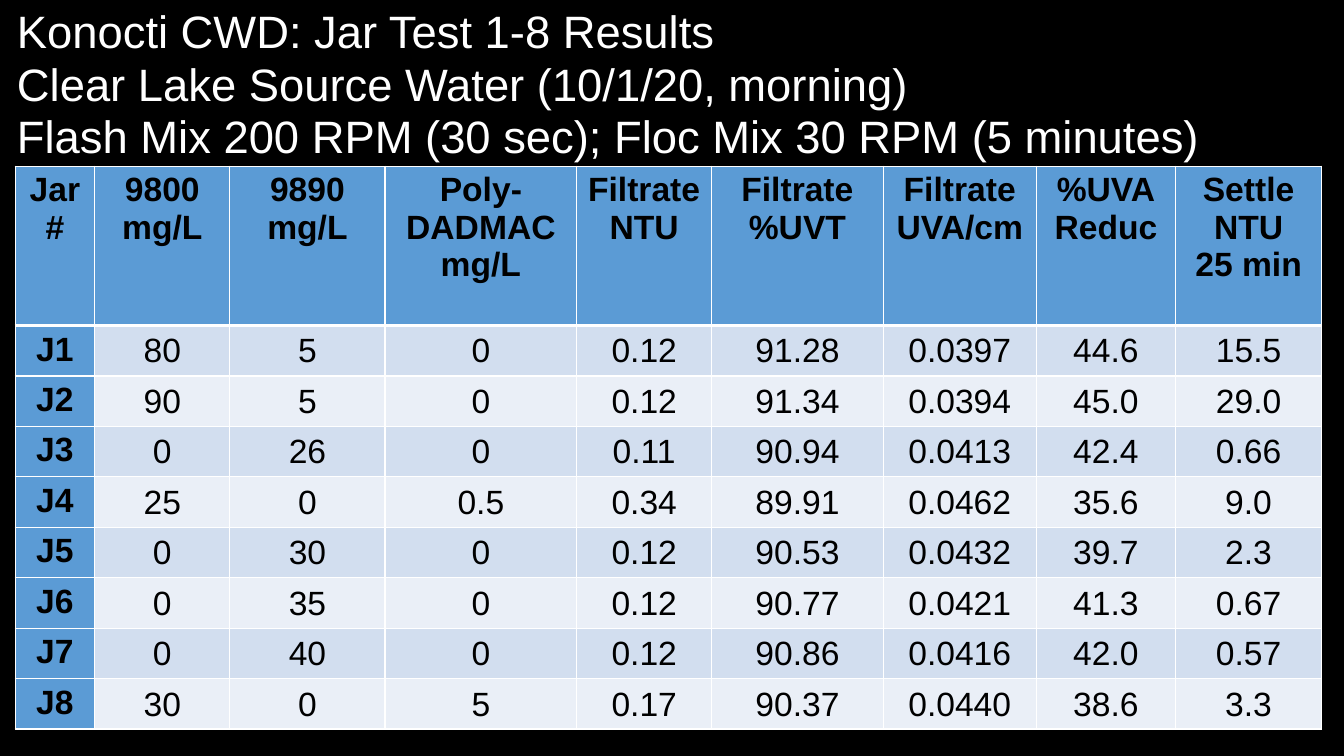
"""Build the jar test results slide: a title above a table of eight jars."""
from lxml import etree
from pptx import Presentation
from pptx.dml.color import RGBColor
from pptx.enum.text import MSO_ANCHOR, PP_ALIGN
from pptx.oxml.ns import qn
from pptx.util import Inches, Pt

BLACK = RGBColor(0x00, 0x00, 0x00)
WHITE = RGBColor(0xFF, 0xFF, 0xFF)
HEADER_BLUE = RGBColor(0x5B, 0x9B, 0xD5)
BANDS = [RGBColor(0xEA, 0xEF, 0xF7), RGBColor(0xD2, 0xDE, 0xEF)]
LEFT, CENTER = PP_ALIGN.LEFT, PP_ALIGN.CENTER
TOP, MIDDLE = MSO_ANCHOR.TOP, MSO_ANCHOR.MIDDLE

TITLE = (
    "Konocti CWD: Jar Test 1-8 Results\v"
    "Clear Lake Source Water (10/1/20, morning)\v"
    "Flash Mix 200 RPM (30 sec); Floc Mix 30 RPM (5 minutes)"
)
COLUMN_WIDTHS = [0.79, 1.34, 1.54, 1.9, 1.34, 1.7, 1.52, 1.38, 1.45]
HEADER_HEIGHT, JAR_HEIGHT = 1.58, 0.47
ROWS = [
    ["Jar\n#", "9800\nmg/L", "9890\nmg/L", "Poly-DADMAC\nmg/L", "Filtrate\nNTU",
     "Filtrate\n%UVT", "Filtrate\nUVA/cm", "%UVA\nReduc", "Settle\nNTU\n25 min"],
    ["J1", "80", "5", "0", "0.12", "91.28", "0.0397", "44.6", "15.5"],
    ["J2", "90", "5", "0", "0.12", "91.34", "0.0394", "45.0", "29.0"],
    ["J3", "0", "26", "0", "0.11", "90.94", "0.0413", "42.4", "0.66"],
    ["J4", "25", "0", "0.5", "0.34", "89.91", "0.0462", "35.6", "9.0"],
    ["J5", "0", "30", "0", "0.12", "90.53", "0.0432", "39.7", "2.3"],
    ["J6", "0", "35", "0", "0.12", "90.77", "0.0421", "41.3", "0.67"],
    ["J7", "0", "40", "0", "0.12", "90.86", "0.0416", "42.0", "0.57"],
    ["J8", "30", "0", "5", "0.17", "90.37", "0.0440", "38.6", "3.3"],
]


def write_text(text_frame, text, size=24, color=BLACK, bold=False, align=CENTER, spacing=1.0):
    text_frame.text = text
    for paragraph in text_frame.paragraphs:
        paragraph.alignment = align
        paragraph.line_spacing = spacing
        for run in paragraph.runs:
            run.font.name = "Arial"
            run.font.size = Pt(size)
            run.font.bold = bold
            run.font.color.rgb = color


def add_border(cell, side, width):
    properties = cell._tc.get_or_add_tcPr()
    line = etree.SubElement(properties, qn(f"a:ln{side}"), w=str(Pt(width)))
    fill = etree.SubElement(line, qn("a:solidFill"))
    etree.SubElement(fill, qn("a:srgbClr"), val=str(WHITE))


presentation = Presentation()
presentation.slide_width = Inches(13.33)
presentation.slide_height = Inches(7.5)
slide = presentation.slides.add_slide(presentation.slide_layouts[6])
slide.background.fill.solid()
slide.background.fill.fore_color.rgb = BLACK

title = slide.shapes.add_textbox(Inches(0.07), Inches(0.12), Inches(13.03), Inches(1.45))
title.text_frame.word_wrap = True
title.text_frame.vertical_anchor = MIDDLE
write_text(title.text_frame, TITLE, size=32.4, color=WHITE, align=LEFT, spacing=0.97)

table_height = HEADER_HEIGHT + JAR_HEIGHT * (len(ROWS) - 1)
table = slide.shapes.add_table(
    len(ROWS), len(COLUMN_WIDTHS),
    Inches(0.15), Inches(1.65), Inches(sum(COLUMN_WIDTHS)), Inches(table_height),
).table
table.first_col = True
for column, width in zip(table.columns, COLUMN_WIDTHS):
    column.width = Inches(width)

for row_index, values in enumerate(ROWS):
    is_header = row_index == 0
    table.rows[row_index].height = Inches(HEADER_HEIGHT if is_header else JAR_HEIGHT)
    for column_index, value in enumerate(values):
        cell = table.cell(row_index, column_index)
        is_label = is_header or column_index == 0
        write_text(cell.text_frame, value, bold=is_label)
        cell.vertical_anchor = TOP if is_label else MIDDLE
        cell.margin_left = cell.margin_right = Inches(0.1 if is_label else 0.01)
        cell.margin_top = Inches(0.05 if is_label else 0.01)
        cell.margin_bottom = Inches(0.05 if is_label else 0)
        for side in "LRTB":
            below_header = (row_index, side) in [(0, "B"), (1, "T")]
            add_border(cell, side, 3 if below_header else 1)
        cell.fill.solid()
        cell.fill.fore_color.rgb = HEADER_BLUE if is_label else BANDS[row_index % 2]

presentation.save("out.pptx")
